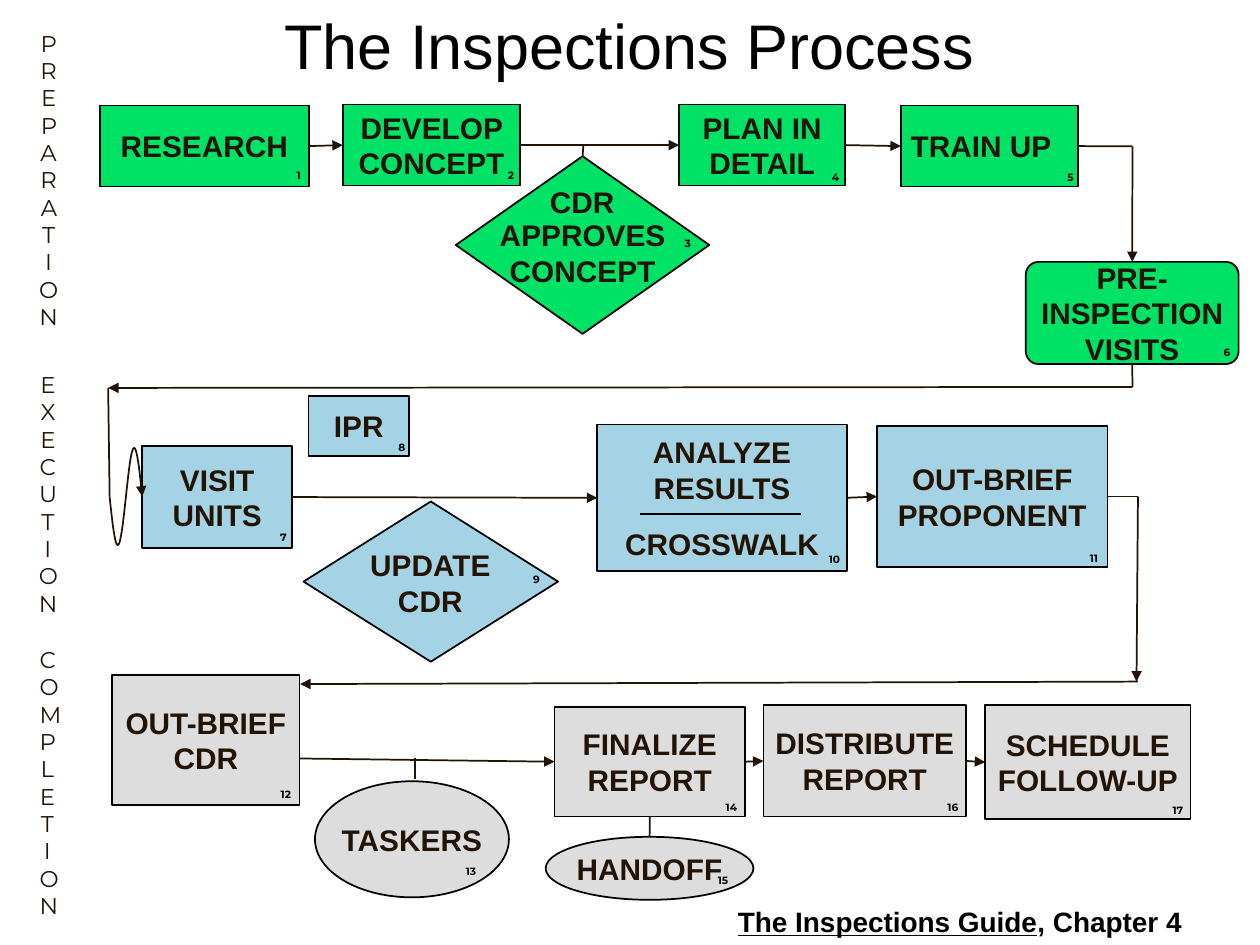
"""Build the slide that charts the inspections process in three phases."""
import math
from dataclasses import dataclass
from typing import Optional, Union

import lxml.etree
import pptx
import pptx.dml.color
import pptx.enum.shapes
import pptx.enum.text
import pptx.oxml.ns
import pptx.util

Cm = pptx.util.Cm
Pt = pptx.util.Pt
qn = pptx.oxml.ns.qn
SHAPE = pptx.enum.shapes.MSO_SHAPE
ALIGN = pptx.enum.text.PP_ALIGN

GREEN = pptx.dml.color.RGBColor(0x00, 0xE2, 0x66)
BLUE = pptx.dml.color.RGBColor(0xA3, 0xD3, 0xE4)
GRAY = pptx.dml.color.RGBColor(0xDD, 0xDD, 0xDD)
INK = pptx.dml.color.RGBColor(0x22, 0x13, 0x04)
BLACK = pptx.dml.color.RGBColor(0x00, 0x00, 0x00)

TOP, LEFT, BOTTOM, RIGHT = range(4)


@dataclass
class Step:
    number: int
    text: str
    box: tuple[float, float, float, float]
    number_at: tuple[float, float]
    fill: pptx.dml.color.RGBColor
    kind: int = SHAPE.RECTANGLE
    align: int = ALIGN.CENTER


@dataclass
class Label:
    text: str
    box: tuple[float, float, float, float]
    size: float = 17
    font: str = "Arial"
    color: pptx.dml.color.RGBColor = INK
    bold: bool = True
    align: int = ALIGN.CENTER
    margins: Optional[tuple[float, float]] = (0.2, 0.1)
    wrap: bool = True


@dataclass
class Side:
    step: int
    site: int


@dataclass
class Link:
    start: Union[Side, tuple[float, float]]
    end: Union[Side, tuple[float, float]]
    arrow: bool = True
    color: pptx.dml.color.RGBColor = INK


STEPS = [
    Step(1, "RESEARCH", (2.01, 2.13, 4.22, 1.63), (5.77, 3.28), GREEN),
    Step(2, "DEVELOP CONCEPT", (6.91, 2.11, 3.58, 1.63), (10.03, 3.28), GREEN),
    Step(3, "", (9.19, 3.15, 5.11, 3.58), (13.59, 4.65), GREEN, SHAPE.DIAMOND),
    Step(4, "PLAN IN DETAIL", (13.69, 2.11, 3.35, 1.63), (16.56, 3.33), GREEN),
    Step(5, "TRAIN UP", (18.16, 2.13, 3.58, 1.63), (21.31, 3.33), GREEN, align=ALIGN.LEFT),
    Step(6, "PRE-INSPECTION VISITS", (20.68, 5.28, 4.29, 2.06), (24.46, 6.86), GREEN,
         SHAPE.ROUNDED_RECTANGLE),
    Step(7, "VISIT UNITS", (2.87, 8.99, 3.02, 2.06), (5.44, 10.59), BLUE),
    Step(8, "IPR", (6.22, 7.98, 2.03, 1.22), (7.82, 8.76), BLUE),
    Step(9, "", (6.12, 10.11, 5.13, 3.23), (10.54, 11.43), BLUE, SHAPE.DIAMOND),
    Step(10, "ANALYZE\nRESULTS\nCROSSWALK", (12.04, 8.56, 5.03, 2.95), (16.46, 11.02), BLUE),
    Step(11, "OUT-BRIEF PROPONENT", (17.68, 8.59, 4.65, 2.84), (21.72, 11), BLUE),
    Step(12, "OUT-BRIEF CDR", (2.26, 13.61, 3.78, 2.62), (5.41, 15.77), GRAY),
    Step(13, "TASKERS", (6.35, 15.75, 3.91, 2.34), (9.14, 17.32), GRAY, SHAPE.OVAL),
    Step(14, "FINALIZE REPORT", (11.18, 14.25, 3.84, 2.21), (14.38, 16.03), GRAY),
    Step(15, "HANDOFF", (11, 16.87, 4.19, 1.27), (14.22, 17.5), GRAY, SHAPE.OVAL),
    Step(16, "DISTRIBUTE REPORT", (15.39, 14.22, 4.09, 2.24), (18.85, 16.03), GRAY),
    Step(17, "SCHEDULE FOLLOW-UP", (19.86, 14.22, 4.14, 2.29), (23.39, 16.08), GRAY),
]

DECISIONS = [
    Label("CDR", (10.82, 3.61, 1.83, 0.91)),
    Label("APPROVES CONCEPT", (9.42, 4.27, 4.65, 1.65)),
    Label("UPDATE CDR", (7.14, 10.92, 3.07, 1.65)),
]

PHASES = [
    ("PREPARATION", (-2.26, 3.35, 6.48, 0.58)),
    ("EXECUTION", (-1.65, 9.63, 5.23, 0.56)),
    ("COMPLETION", (-1.93, 15.49, 5.77, 0.51)),
]

ROW_PAIRS = [(1, 2), (2, 4), (4, 5), (7, 10), (10, 11), (14, 16), (16, 17)]

LINKS = [Link(Side(a, RIGHT), Side(b, LEFT)) for a, b in ROW_PAIRS] + [
    Link((11.76, 2.92), Side(3, TOP), False),
    Link(Side(5, RIGHT), (22.83, 2.95), False),
    Link((22.83, 2.95), Side(6, TOP)),
    Link(Side(6, BOTTOM), (22.83, 7.8), False),
    Link((22.83, 7.8), (2.18, 7.82)),
    Link((2.18, 7.82), (2.21, 10.01), False),
    Link((12.9, 10.36), (16.15, 10.36), False, BLACK),
    Link(Side(11, RIGHT), (22.94, 10.01), False),
    Link((22.94, 10.01), (22.91, 13.74)),
    Link((22.94, 13.74), (6.05, 13.79)),
    Link((6.05, 15.29), Side(14, LEFT)),
    Link((8.36, 15.29), (8.36, 15.7), False),
    Link(Side(14, BOTTOM), Side(15, TOP), False),
]


def style_text(tf, size: float, font: str, color, bold: bool, align: int) -> None:
    for p in tf.paragraphs:
        p.alignment = align
        for r in p.runs:
            r.font.size = Pt(size)
            r.font.name = font
            r.font.bold = bold
            r.font.color.rgb = color


def set_margins(tf, across: float, down: float) -> None:
    tf.margin_left = tf.margin_right = Cm(across)
    tf.margin_top = tf.margin_bottom = Cm(down)


def style_line(sp, color, arrow: bool = False) -> None:
    sp.line.color.rgb = color
    sp.line.width = Pt(1)
    if arrow:
        ln = sp.element.spPr.find(qn("a:ln"))
        lxml.etree.SubElement(ln, qn("a:tailEnd"), type="triangle")


def draw_step(s, step: Step):
    sp = s.shapes.add_shape(step.kind, *map(Cm, step.box))
    sp.shadow.inherit = False
    sp.fill.solid()
    sp.fill.fore_color.rgb = step.fill
    style_line(sp, BLACK)
    if step.kind == SHAPE.ROUNDED_RECTANGLE:
        sp.adjustments[0] = 0.125
    if step.text:
        tf = sp.text_frame
        tf.text = step.text
        tf.word_wrap = step.kind != SHAPE.OVAL
        tf.vertical_anchor = pptx.enum.text.MSO_ANCHOR.MIDDLE
        set_margins(tf, 0.2, 0.1)
        style_text(tf, 17, "Arial", INK, True, step.align)
        if len(tf.paragraphs) > 1:
            tf.paragraphs[-1].space_before = Pt(11.5)
    return sp


def draw_label(s, label: Label):
    sp = s.shapes.add_textbox(*map(Cm, label.box))
    tf = sp.text_frame
    tf.text = label.text
    tf.word_wrap = label.wrap
    tf.auto_size = pptx.enum.text.MSO_AUTO_SIZE.SHAPE_TO_FIT_TEXT
    if label.margins:
        set_margins(tf, *label.margins)
    style_text(tf, label.size, label.font, label.color, label.bold, label.align)
    return sp


def draw_phase(s, text: str, box: tuple[float, float, float, float]) -> None:
    sp = draw_label(s, Label(text, box, 13, "Montserrat", bold=False))
    sp.rotation = 270
    sp.text_frame._txBody.bodyPr.set("vert", "eaVert")


def draw_link(s, link: Link, shapes: dict) -> None:
    points = [(0, 0) if isinstance(e, Side) else e for e in (link.start, link.end)]
    sp = s.shapes.add_connector(
        pptx.enum.shapes.MSO_CONNECTOR.STRAIGHT, *(Cm(v) for point in points for v in point))
    for end, join in ((link.start, sp.begin_connect), (link.end, sp.end_connect)):
        if isinstance(end, Side):
            join(shapes[end.step], end.site)
    style_line(sp, link.color, link.arrow)
    lxml.etree.SubElement(sp.element.spPr, qn("a:effectLst"))


def draw_wave(s, x: float, y: float, width: float, height: float, count: int = 40) -> None:
    points = [(Cm(x + width * i / count), Cm(y + height * math.sin(2 * math.pi * i / count)))
              for i in range(count + 1)]
    builder = s.shapes.build_freeform(*points[0])
    builder.add_line_segments(points[1:], close=False)
    sp = builder.convert_to_shape()
    sp.shadow.inherit = False
    sp.fill.background()
    style_line(sp, INK, True)


def main() -> None:
    prs = pptx.Presentation()
    prs.slide_width, prs.slide_height = Cm(25.4), Cm(19.05)
    s = prs.slides.add_slide(prs.slide_layouts[6])
    draw_label(s, Label("The Inspections Process", (4.95, 0, 15.47, 1.78), 36, color=BLACK,
                        bold=False, margins=None, wrap=False))
    shapes = {step.number: draw_step(s, step) for step in STEPS}
    for label in DECISIONS:
        draw_label(s, label)
    for text, box in PHASES:
        draw_phase(s, text, box)
    for link in LINKS:
        draw_link(s, link, shapes)
    draw_wave(s, 2.21, 10.01, 0.66, 0.98)
    for step in STEPS:
        width = 0.46 if step.number < 10 else 0.89
        draw_label(s, Label(str(step.number), (*step.number_at, width, 0.51), 6, "Montserrat",
                            BLACK, align=ALIGN.LEFT, margins=None))
    sp = draw_label(s, Label("The Inspections Guide", (14.17, 18.11, 10.36, 0.94), 16,
                             color=BLACK, margins=None))
    p = sp.text_frame.paragraphs[0]
    p.add_run().text = ", Chapter 4"
    style_text(sp.text_frame, 16, "Arial", BLACK, True, ALIGN.CENTER)
    p.runs[0].font.underline = True
    prs.save("out.pptx")


if __name__ == "__main__":
    main()
